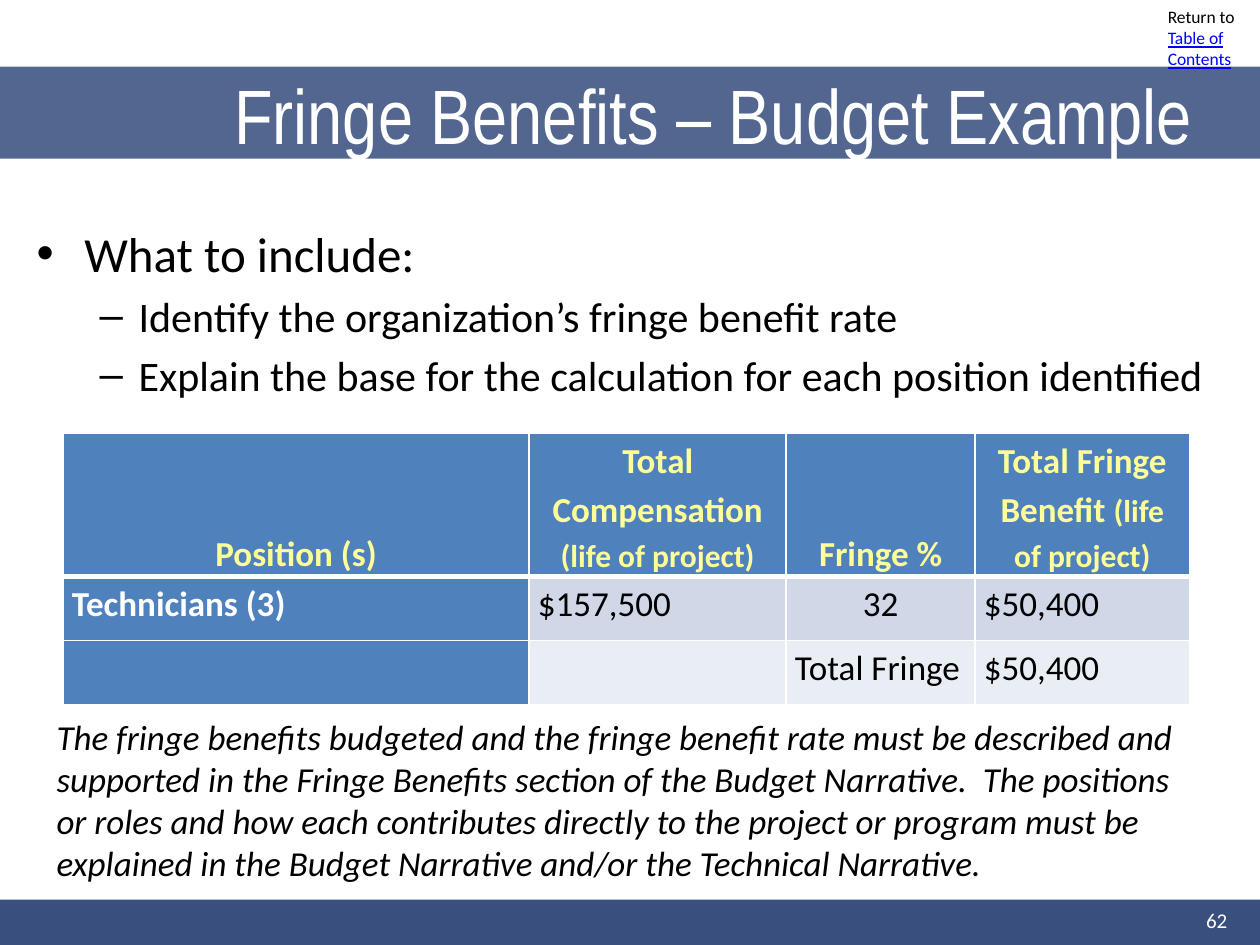
from dataclasses import dataclass

from lxml.etree import SubElement
from pptx import Presentation
from pptx.dml.color import RGBColor
from pptx.enum.shapes import MSO_SHAPE
from pptx.enum.text import MSO_ANCHOR, PP_ALIGN
from pptx.oxml.ns import qn
from pptx.util import Inches, Pt


@dataclass(frozen=True)
class Theme:
    navy: str = "39507F"
    white: str = "FFFFFF"
    black: str = "000000"
    link: str = "0000FF"
    header_text: str = "FFFF99"
    header_fill: str = "4F81BD"
    row_fills: tuple = ("D0D8E8", "E9EDF4")
    title_font: str = "Arial Narrow"
    body_font: str = "Calibri"
    title_size: int = 44
    bullet_sizes: tuple = (28, 24)
    text_size: int = 20
    detail_size: int = 18
    number_size: int = 12
    link_size: int = 10


THEME = Theme()


def set_font(font, size, color, name=THEME.body_font, bold=False, italic=False):
    font.name, font.size = name, Pt(size)
    font.bold, font.italic = bold, italic
    font.color.rgb = RGBColor.from_string(color)


def place(shape, box):
    shape.left, shape.top, shape.width, shape.height = map(Inches, box)
    # Bring the placeholder in front of the bands
    shape.element.getparent().append(shape.element)


def add_text(slide, box, text, anchor=MSO_ANCHOR.TOP):
    frame = slide.shapes.add_textbox(*map(Inches, box)).text_frame
    frame.word_wrap = True
    frame.vertical_anchor = anchor
    frame.text = text
    return frame.paragraphs[0]


def add_band(slide, box, opacity=100):
    band = slide.shapes.add_shape(MSO_SHAPE.RECTANGLE, *map(Inches, box))
    band.shadow.inherit = False
    band.line.fill.background()
    band.fill.solid()
    band.fill.fore_color.rgb = RGBColor.from_string(THEME.navy)
    if opacity < 100:
        color = band.element.spPr.find(qn("a:solidFill"))[0]
        SubElement(color, qn("a:alpha"), val=str(opacity * 1000))


def add_contents_link(slide, box):
    paragraph = add_text(slide, box, "Return to ")
    set_font(paragraph.font, THEME.link_size, THEME.black)
    run = paragraph.add_run()
    run.text = "Table of Contents"
    run.font.underline = True
    run.font.color.rgb = RGBColor.from_string(THEME.link)


def add_title(slide, box, text):
    title = slide.shapes.title
    place(title, box)
    title.text_frame.text = text
    title.text_frame.vertical_anchor = MSO_ANCHOR.MIDDLE
    paragraph = title.text_frame.paragraphs[0]
    paragraph.alignment = PP_ALIGN.LEFT
    set_font(paragraph.font, THEME.title_size, THEME.white, THEME.title_font)


def add_bullets(slide, box, items):
    body = slide.placeholders[1]
    place(body, box)
    frame = body.text_frame
    frame.text = "\n".join(text for _, text in items)
    styles = (("•", 0.38, -0.38), ("–", 0.81, -0.31))
    for paragraph, (level, _) in zip(frame.paragraphs, items):
        paragraph.level = level
        size = THEME.bullet_sizes[level]
        paragraph.space_before = Pt(0 if level == 0 else size * 0.2)
        symbol, margin, indent = styles[level]
        properties = paragraph._p.get_or_add_pPr()
        properties.set("marL", str(Inches(margin)))
        properties.set("indent", str(Inches(indent)))
        SubElement(properties, qn("a:buFont"), typeface="Arial")
        SubElement(properties, qn("a:buChar"), char=symbol)
        set_font(paragraph.font, size, THEME.black)


def format_cell(cell, fill, bottom_width):
    properties = cell._tc.get_or_add_tcPr()
    for side, width in (("L", 1), ("R", 1), ("T", 1), ("B", bottom_width)):
        line = SubElement(properties, qn(f"a:ln{side}"), w=str(Pt(width)))
        SubElement(SubElement(line, qn("a:solidFill")), qn("a:srgbClr"), val=THEME.white)
    cell.fill.solid()
    cell.fill.fore_color.rgb = RGBColor.from_string(fill)
    cell.margin_left = cell.margin_right = Inches(0.07)
    cell.margin_top = cell.margin_bottom = 0


def add_budget_table(slide, box, widths, heights, rows):
    table = slide.shapes.add_table(len(rows), len(widths), *map(Inches, box)).table
    for column, width in zip(table.columns, widths):
        column.width = Inches(width)
    for row, height in zip(table.rows, heights):
        row.height = Inches(height)
    for row_index, values in enumerate(rows):
        header = row_index == 0
        for column_index, value in enumerate(values):
            cell = table.cell(row_index, column_index)
            label = header or column_index == 0
            fill = THEME.header_fill if label else THEME.row_fills[row_index - 1]
            format_cell(cell, fill, 3 if header else 1)
            cell.vertical_anchor = MSO_ANCHOR.BOTTOM if header else MSO_ANCHOR.TOP
            # A "|" splits a heading from its smaller detail
            main, _, detail = value.partition("|")
            paragraph = cell.text_frame.paragraphs[0]
            paragraph.line_spacing = 1.15
            if header or value == "32":
                paragraph.alignment = PP_ALIGN.CENTER
            color = THEME.header_text if header else THEME.white if label else THEME.black
            set_font(paragraph.font, THEME.text_size, color, bold=label)
            if main:
                paragraph.add_run().text = main
            if detail:
                run = paragraph.add_run()
                run.text = detail
                run.font.size = Pt(THEME.detail_size)


def add_explanation(slide, box, text):
    paragraph = add_text(slide, box, text)
    set_font(paragraph.font, THEME.text_size, THEME.black, italic=True)


def add_slide_number(slide, box, number):
    paragraph = add_text(slide, box, number, MSO_ANCHOR.MIDDLE)
    paragraph.alignment = PP_ALIGN.RIGHT
    set_font(paragraph.font, THEME.number_size, THEME.white)


def main():
    presentation = Presentation()
    presentation.slide_width, presentation.slide_height = Inches(10), Inches(7.5)
    slide = presentation.slides.add_slide(presentation.slide_layouts[1])

    # Bands and corner link
    add_band(slide, (0, 7.14, 10, 0.38))
    add_band(slide, (0, 0.53, 10, 0.73), opacity=87)
    add_contents_link(slide, (9.17, 0, 0.83, 0.61))

    # Title and text
    add_title(slide, (1.76, 0.28, 7.97, 1.25), "Fringe Benefits – Budget Example")
    add_explanation(
        slide, (0.35, 5.63, 9.22, 1.45),
        "The fringe benefits budgeted and the fringe benefit rate must be described "
        "and supported in the Fringe Benefits section of the Budget Narrative.  The "
        "positions or roles and how each contributes directly to the project or program "
        "must be explained in the Budget Narrative and/or the Technical Narrative.")
    add_bullets(slide, (0.19, 1.72, 9.55, 1.52), [
        (0, "What to include:"),
        (1, "Identify the organization’s fringe benefit rate"),
        (1, "Explain the base for the calculation for each position identified"),
    ])

    # Budget table
    add_budget_table(
        slide, (0.5, 3.44, 8.94, 2.1), (3.7, 2.04, 1.5, 1.7), (0.99, 0.51, 0.51), [
            ("Position (s)", "Total Compensation |(life of project)", "Fringe %",
             "Total Fringe Benefit |(life of project)"),
            ("Technicians (3)", "$157,500", "32", "$50,400"),
            ("", "", "Total Fringe", "$50,400"),
        ])

    add_slide_number(slide, (7.51, 7.1, 2.33, 0.4), "62")
    presentation.save("out.pptx")


if __name__ == "__main__":
    main()
